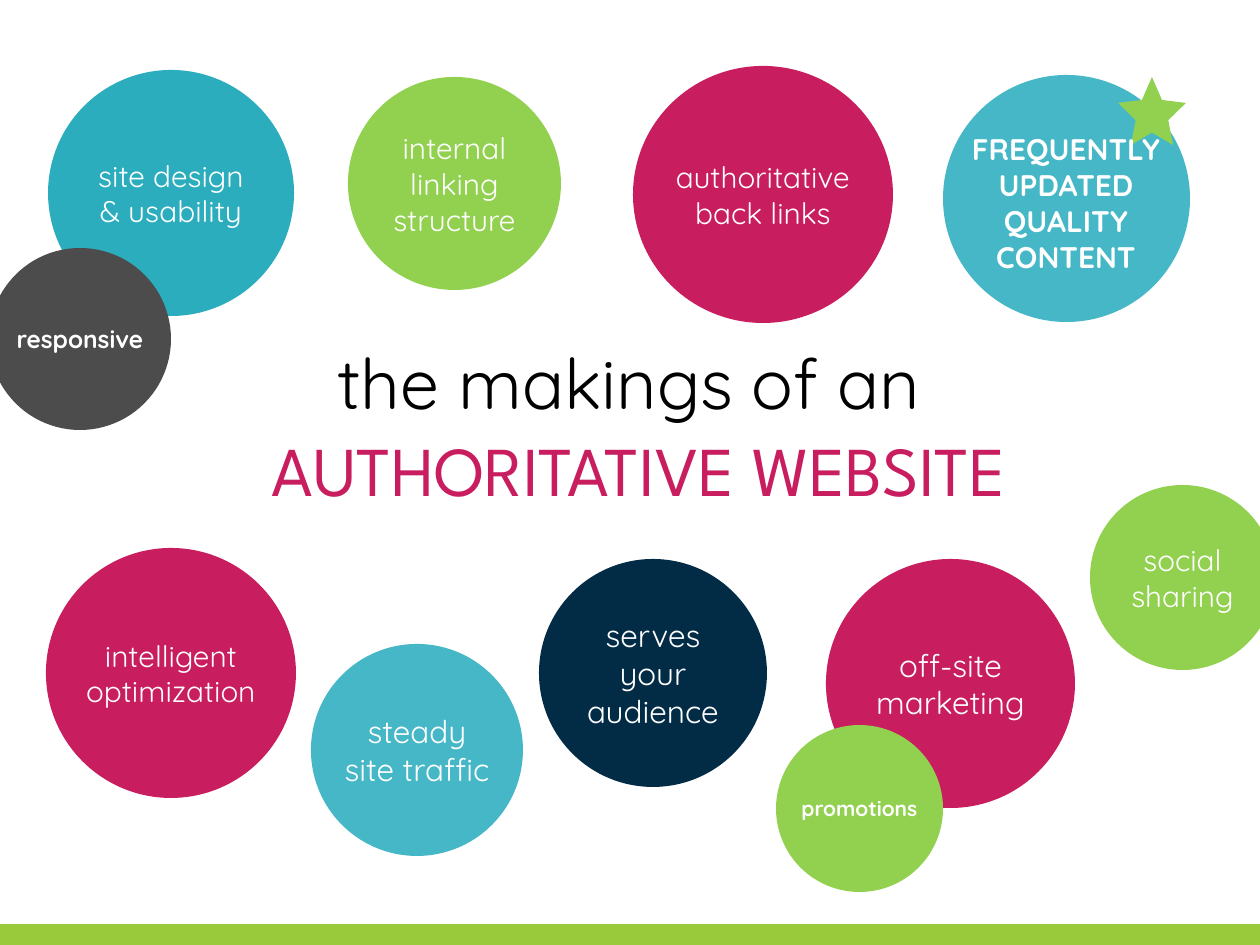
from pptx import Presentation, util as u
from pptx.dml.color import RGBColor
from pptx.enum import shapes, text

PX = u.Inches(1) / 126
FONT = "Quicksand"
WHITE, BLACK = "FFFFFF", "000000"
TEAL, SKY, NAVY, GREY = "2CADBE", "46B7C6", "022C46", "4C4C4C"
PINK, LIME, GREEN = "C81D5E", "92D050", "98CA3C"

# left, top, width, height, fill, lines, size, bold; from back to front
BUBBLES = [
    (48, 70, 246, 246, TEAL, ["site design & usability"], 17, False),
    (633, 66, 260, 257, PINK, ["authoritative back links"], 17, False),
    (943, 75, 247, 247, SKY, [], 17, True),
    (348, 77, 213, 213, LIME, ["internal linking structure"], 17, False),
    (-11, 248, 182, 182, GREY, ["responsive"], 14, True),
    (46, 548, 250, 250, PINK, ["intelligent", "optimization"], 17, False),
    (311, 644, 212, 212, SKY, ["steady site traffic"], 18, False),
    (539, 559, 228, 228, NAVY, ["serves your audience"], 18, False),
    (826, 559, 249, 249, PINK, ["off-site marketing"], 18, False),
    (776, 725, 167, 167, LIME, ["promotions"], 12, True),
    (1090, 485, 185, 185, LIME, ["social", "sharing"], 17, False),
]


def color(value):
    return RGBColor.from_string(value)


def emu(*lengths):
    return [round(length * PX) for length in lengths]


def write(frame, lines, size, ink=WHITE, bold=False, font=FONT):
    for number, line in enumerate(lines):
        paragraph = frame.add_paragraph() if number else frame.paragraphs[0]
        paragraph.text = line
        paragraph.alignment = text.PP_ALIGN.CENTER
        paragraph.font.name = font
        paragraph.font.size = u.Pt(size)
        paragraph.font.bold = bold
        paragraph.font.color.rgb = color(ink)


def add_plain_shape(slide, kind, box, fill):
    shape = slide.shapes.add_shape(kind, *emu(*box))
    shape.shadow.inherit = False
    shape.fill.solid()
    shape.fill.fore_color.rgb = color(fill)
    shape.line.fill.background()
    return shape


def add_bubble(slide, left, top, width, height, fill, lines, size, bold):
    bubble = add_plain_shape(slide, shapes.MSO_SHAPE.OVAL,
                             (left, top, width, height), fill)
    frame = bubble.text_frame
    frame.margin_left = frame.margin_right = 0
    frame.margin_top = frame.margin_bottom = 0
    frame.vertical_anchor = text.MSO_ANCHOR.MIDDLE
    write(frame, lines, size, bold=bold)


def add_label(slide, box, line, size, wrap=True, **style):
    frame = slide.shapes.add_textbox(*emu(*box)).text_frame
    frame.word_wrap = wrap
    write(frame, [line], size, **style)
    return frame


def main():
    deck = Presentation()
    deck.slide_width, deck.slide_height = emu(1260, 945)
    slide = deck.slides.add_slide(deck.slide_layouts[6])

    # Footer band
    add_plain_shape(slide, shapes.MSO_SHAPE.RECTANGLE, (0, 924, 1260, 21), GREEN)

    # Two-line heading
    heading = add_label(slide, (96, 382, 1086, 183), "AUTHORITATIVE WEBSITE", 40,
                        ink=PINK, font="League Spartan")
    heading.vertical_anchor = text.MSO_ANCHOR.MIDDLE
    heading.paragraphs[0].line_spacing = 0.9
    add_label(slide, (299, 333, 659, 97), "the makings of an", 40,
              wrap=False, ink=BLACK)

    # Qualities of the website
    for bubble in BUBBLES:
        add_bubble(slide, *bubble)

    # Starred quality
    star = add_plain_shape(slide, shapes.MSO_SHAPE.STAR_5_POINT,
                           (1118, 77, 68, 68), LIME)
    star.adjustments[0] = 0.24
    add_label(slide, (927, 125, 278, 158), "FREQUENTLY UPDATED QUALITY CONTENT",
              17, bold=True)

    deck.save("out.pptx")


if __name__ == "__main__":
    main()
